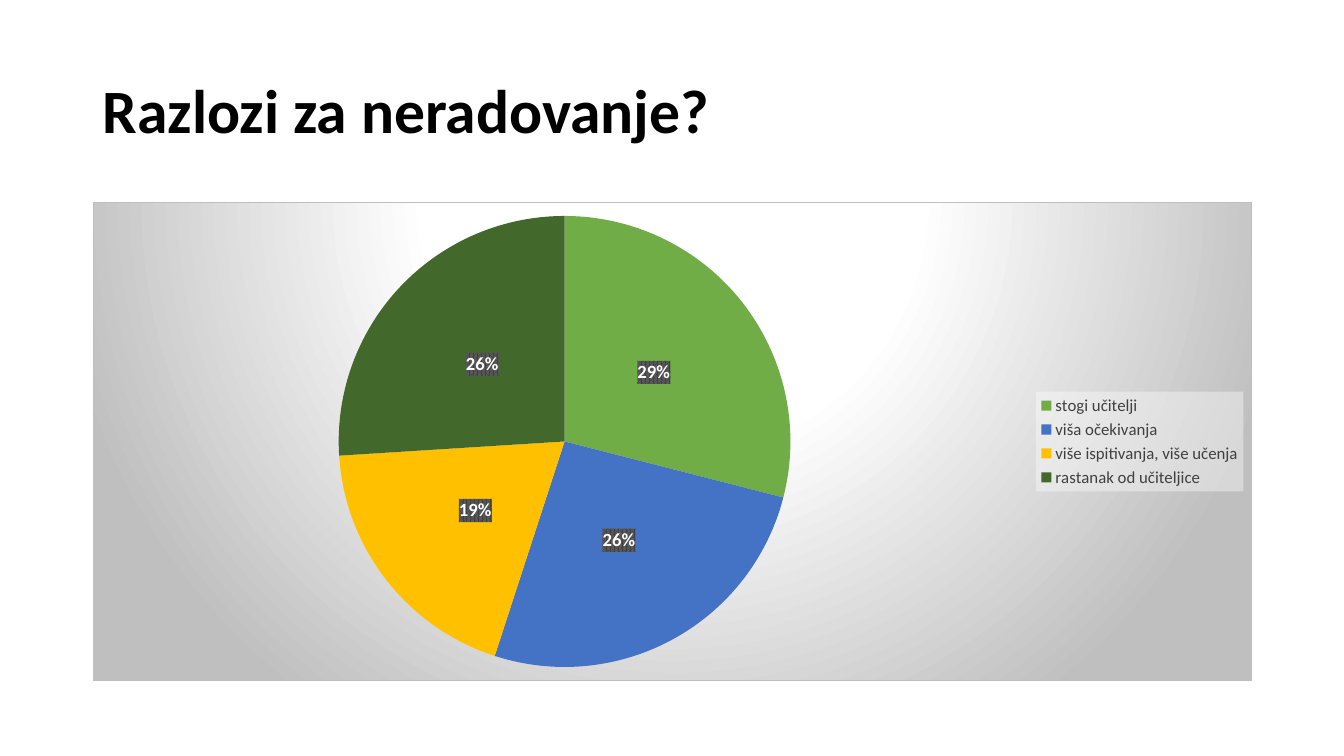
import pptx
import pptx.util
import pptx.chart.data
import pptx.dml.color
import pptx.enum.chart
import pptx.enum.text
import pptx.oxml

TITLE = "Razlozi za neradovanje?"
FONT = "Calibri"
HEX = {
    "black": "000000", "white": "FFFFFF", "text": "404040",
    "dark": "595959", "edge": "BFBFBF",
}
REASONS = [
    ("stogi učitelji", 29, "70AD47"),
    ("viša očekivanja", 26, "4472C4"),
    ("više ispitivanja, više učenja", 19, "FFC000"),
    ("rastanak od učiteljice", 26, "43682B"),
]
LEFT, WIDTH = 0.92, 11.5
NS = ('xmlns:c="http://schemas.openxmlformats.org/drawingml/2006/chart" '
      'xmlns:a="http://schemas.openxmlformats.org/drawingml/2006/main"')


def rgb(code):
    return pptx.dml.color.RGBColor.from_string(code)


def style(font, size, code, bold=False):
    font.name, font.size, font.bold = FONT, pptx.util.Pt(size), bold
    font.color.rgb = rgb(code)


def color(code, extra=""):
    return f'<a:srgbClr val="{code}">{extra}</a:srgbClr>'


def paint(chart, where, fill):
    mark = chart.element.xpath(where)[0]
    mark.addprevious(pptx.oxml.parse_xml(f"<c:spPr {NS}>{fill}</c:spPr>"))


def add_title(slide):
    box = slide.shapes.add_textbox(*map(pptx.util.Inches, (LEFT, 0.4, WIDTH, 1.45)))
    frame = box.text_frame
    frame.word_wrap = True
    frame.vertical_anchor = pptx.enum.text.MSO_ANCHOR.MIDDLE
    frame.text = TITLE
    line = frame.paragraphs[0]
    line.line_spacing = 0.9
    style(line.runs[0].font, 44, HEX["black"], True)


def add_pie(slide):
    names, values, codes = zip(*REASONS)
    data = pptx.chart.data.CategoryChartData()
    data.categories = names
    data.add_series("Series 1", values)
    area = map(pptx.util.Inches, (LEFT, 2, WIDTH, 4.76))
    kind = pptx.enum.chart.XL_CHART_TYPE.PIE
    chart = slide.shapes.add_chart(kind, *area, data).chart
    chart.has_title = False
    style(chart.font, 10, HEX["black"])

    chart.has_legend = True
    legend = chart.legend
    legend.position = pptx.enum.chart.XL_LEGEND_POSITION.RIGHT
    legend.include_in_layout = False
    style(legend.font, 12, HEX["text"])

    plot = chart.plots[0]
    plot.vary_by_categories = True
    for index, code in enumerate(codes):
        fill = plot.series[0].points[index].format.fill
        fill.solid()
        fill.fore_color.rgb = rgb(code)

    plot.has_data_labels = True
    labels = plot.data_labels
    labels.show_percentage = True
    labels.show_value = False
    labels.number_format = "0%"
    labels.number_format_is_linked = False
    labels.position = pptx.enum.chart.XL_LABEL_POSITION.CENTER
    style(labels.font, 13.3, HEX["white"], True)

    stops = "".join(
        f'<a:gs pos="{at * 1000}">{color(HEX[name])}</a:gs>'
        for at, name in ((0, "white"), (39, "white"), (100, "edge")))
    paint(chart, "./c:txPr",
          f'<a:gradFill><a:gsLst>{stops}</a:gsLst><a:path path="circle">'
          '<a:fillToRect l="50000" t="-80000" r="50000" b="180000"/>'
          '</a:path></a:gradFill><a:ln w="9525"><a:solidFill>'
          f'{color(HEX["edge"])}</a:solidFill></a:ln>')
    paint(chart, ".//c:legend/c:txPr",
          f'<a:solidFill>{color(HEX["white"], "<a:alpha val=%s/>" % chr(34).join(("", "39000", "")))}</a:solidFill>')
    paint(chart, ".//c:dLbls/c:txPr",
          f'<a:pattFill prst="pct75"><a:fgClr>{color(HEX["text"])}</a:fgClr>'
          f'<a:bgClr>{color(HEX["dark"])}</a:bgClr></a:pattFill>')


def main():
    """Build the slide with the pie of reasons."""
    deck = pptx.Presentation()
    deck.slide_width = pptx.util.Inches(13.33)
    deck.slide_height = pptx.util.Inches(7.5)
    slide = deck.slides.add_slide(deck.slide_layouts[6])
    add_title(slide)
    add_pie(slide)
    deck.save("out.pptx")


if __name__ == "__main__":
    main()
